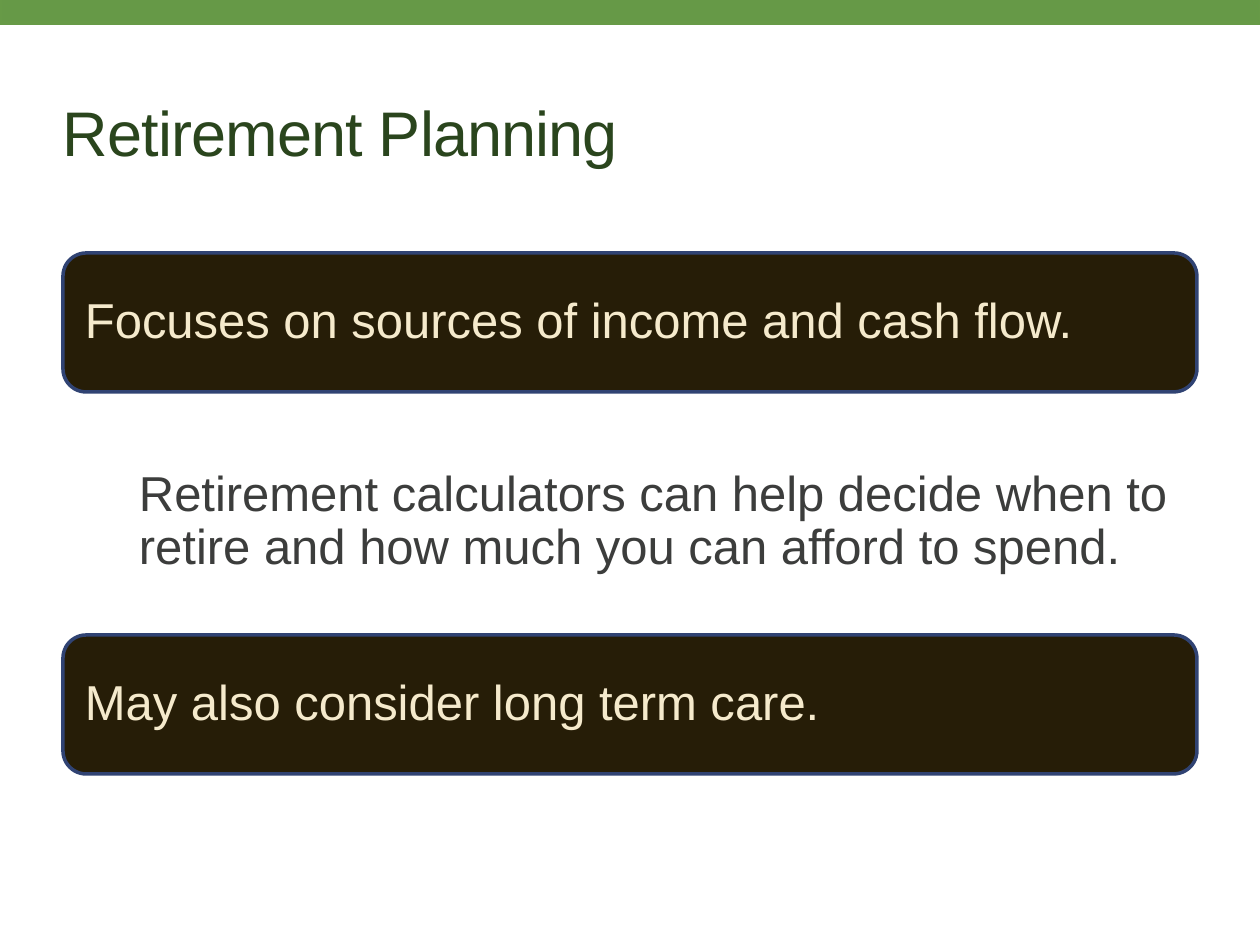
import pptx
import pptx.util
import pptx.dml.color
import pptx.enum.shapes
import pptx.enum.text
import pptx.oxml.ns
import lxml.etree

PX = 914400 / 126
ANCHOR = pptx.enum.text.MSO_ANCHOR
SHAPE = pptx.enum.shapes.MSO_SHAPE


def px(*lengths):
    return [pptx.util.Emu(round(n * PX)) for n in lengths]


def color(code):
    return pptx.dml.color.RGBColor.from_string(code)


def add_block(s, kind, box, fill, line):
    sp = s.shapes.add_shape(kind, *px(*box))
    sp.shadow.inherit = False
    sp.fill.solid()
    sp.fill.fore_color.rgb = color(fill)
    sp.line.color.rgb = color(line)
    sp.line.width = pptx.util.Pt(2)
    return sp


def add_text(s, box, text, size, code, insets, anchor=ANCHOR.MIDDLE, spacing=1.0):
    tf = s.shapes.add_textbox(*px(*box)).text_frame
    tf.word_wrap = True
    tf.vertical_anchor = anchor
    tf.margin_left, tf.margin_top, tf.margin_right, tf.margin_bottom = px(*insets)
    p = tf.paragraphs[0]
    p.text = text
    p.line_spacing = spacing
    p.font.size = pptx.util.Pt(size)
    p.font.name = "Arial"
    p.font.color.rgb = color(code)
    return p


def add_title(s, box, text):
    p = add_text(s, box, text, 36, "2A451D", (0, 0, 0, 0))
    # Slightly tightened letter spacing
    p.runs[0].font._element.set("spc", "-50") if hasattr(p.runs[0].font, "_element") \
        else p.runs[0]._r.get_or_add_rPr().set("spc", "-50")


def add_panel(s, box, text):
    x, y, w, h = box
    add_block(s, SHAPE.ROUNDED_RECTANGLE, box, "261D07", "304373")
    add_text(s, (x + 7, y + 7, w - 14, h - 14), text, 28, "F5EACC",
             (15, 15, 15, 15), spacing=0.9)


def add_detail(s, box, text):
    add_text(s, box, text, 28, "3C3D3C", (76, 77, 28, 5), ANCHOR.TOP, 0.9)


def main():
    prs = pptx.Presentation()
    prs.slide_width, prs.slide_height = px(1260, 945)
    s = prs.slides.add_slide(prs.slide_layouts[6])
    left, width = 63, 1134
    panel_h, detail_h, top = 139, 243, 253

    # Top band and title
    add_block(s, SHAPE.RECTANGLE, (0, -2, 1261, 25), "669947", "679A47")
    add_title(s, (left, 66, width, 130), "Retirement Planning")

    # Stacked panels with the detail between them
    add_panel(s, (left, top, width, panel_h),
              "Focuses on sources of income and cash flow.")
    add_detail(s, (left, top + panel_h, width, detail_h),
               "Retirement calculators can help decide when to retire "
               "and how much you can afford to spend.")
    add_panel(s, (left, top + panel_h + detail_h, width, panel_h),
              "May also consider long term care.")

    prs.save("out.pptx")


if __name__ == "__main__":
    main()
